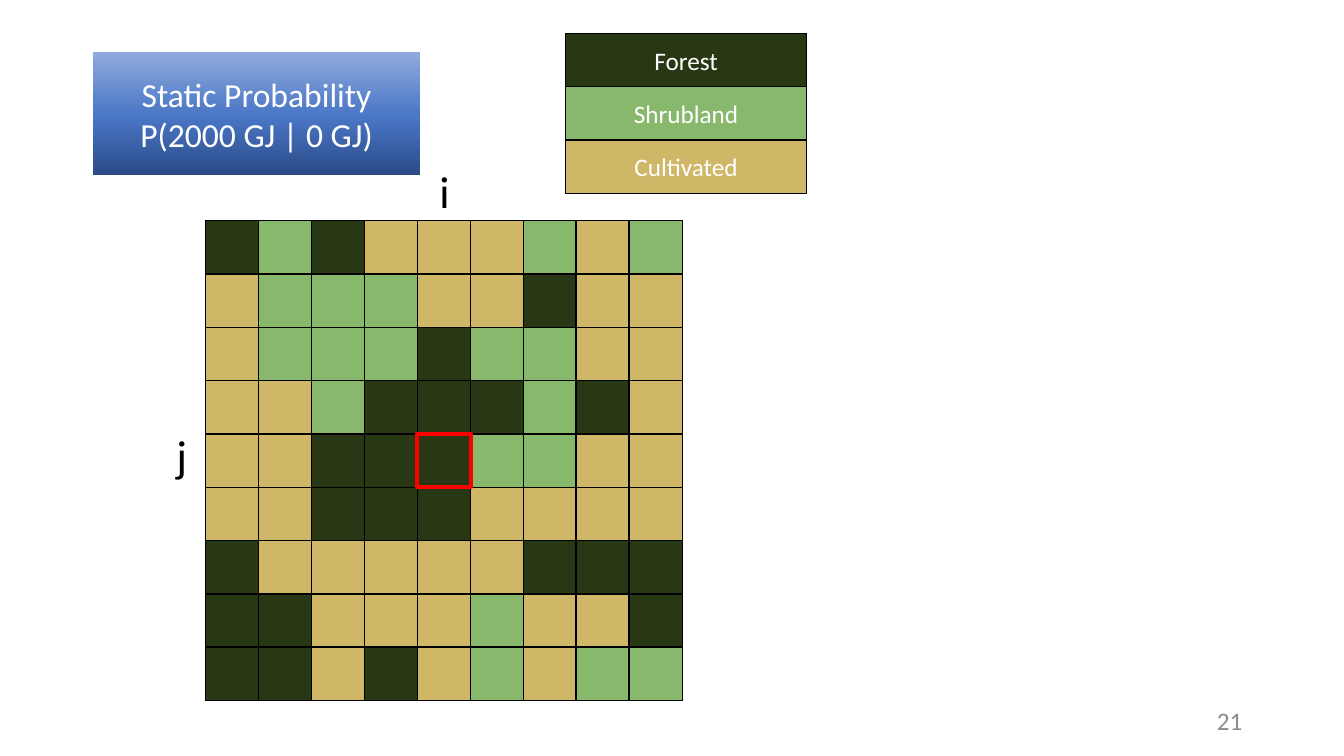
import copy

import pptx
import pptx.dml.color
import pptx.enum.shapes
import pptx.enum.text
import pptx.util
from pptx.util import Inches

COLORS = {
    "forest": "283814",
    "shrubland": "87B86C",
    "cultivated": "D0B667",
    "outline": "000000",
    "highlight": "FF0000",
    "light_text": "FFFFFF",
    "dark_text": "000000",
    "page_number": "8C8C8C",
}
HEADING = ["Static Probability", "P(2000 GJ | 0 GJ)"]
HEADING_GRADIENT = [(0, "2A4B86"), (0.48, "4A76C6"), (1, "8FAADC")]
LEGEND = ["Forest", "Shrubland", "Cultivated"]
LAND_COVER = [
    "FSFCCCSCS",
    "CSSSCCFCC",
    "CSSSFSSCC",
    "CCSFFFSFC",
    "CCFFFSSCC",
    "CCFFFCCCC",
    "FCCCCCFFF",
    "FFCCCSCCF",
    "FFCFCSCSS",
]
COVER_COLORS = {cover[0]: COLORS[cover.lower()] for cover in LEGEND}
FOCUS_ROW, FOCUS_COLUMN = 4, 4
AXIS_LABELS = [("j", 1.65, 4.19), ("i", 4.26, 1.58)]

FONT = "Calibri"
CELL = 0.53
GRID_LEFT, GRID_TOP = 2.04, 2.19
COLUMN_STEP, ROW_STEP = 4.2 / 8, 4.23 / 8
LEGEND_LEFT, LEGEND_TOP, LEGEND_WIDTH = 5.61, 0.33, 2.39

ALIGN = pptx.enum.text.PP_ALIGN
MIDDLE = pptx.enum.text.MSO_ANCHOR.MIDDLE


def rgb(value):
    return pptx.dml.color.RGBColor.from_string(value)


def write(shape, lines, size, color, align):
    frame = shape.text_frame
    frame.word_wrap = True
    frame.text = "\n".join(lines)
    for paragraph in frame.paragraphs:
        paragraph.alignment = align
        paragraph.font.name = FONT
        paragraph.font.size = pptx.util.Pt(size)
        paragraph.font.color.rgb = rgb(color)
    return frame


def add_box(shapes, left, top, width, height, fill=None, line=None, weight=1):
    box = shapes.add_shape(
        pptx.enum.shapes.MSO_SHAPE.RECTANGLE,
        Inches(left), Inches(top), Inches(width), Inches(height),
    )
    box.shadow.inherit = False
    if fill:
        box.fill.solid()
        box.fill.fore_color.rgb = rgb(fill)
    else:
        box.fill.background()
    if line:
        box.line.color.rgb = rgb(line)
        box.line.width = pptx.util.Pt(weight)
    else:
        box.line.fill.background()
    return box


def cell_corner(row, column):
    return GRID_LEFT + column * COLUMN_STEP, GRID_TOP + row * ROW_STEP


def add_heading(shapes):
    heading = add_box(shapes, 0.92, 0.52, 3.25, 1.22)
    heading.fill.gradient()
    heading.fill.gradient_angle = 90
    stop_list = heading.fill._xPr.find(".//" + pptx.oxml.ns.qn("a:gsLst"))
    stop_list.append(copy.deepcopy(stop_list[0]))
    for stop, (position, color) in zip(heading.fill.gradient_stops, HEADING_GRADIENT):
        stop.position = position
        stop.color.rgb = rgb(color)
    write(heading, HEADING, 24, COLORS["light_text"], ALIGN.CENTER)


def add_land_cover(shapes):
    grid = shapes.add_group_shape()
    for row, covers in enumerate(LAND_COVER):
        for column, cover in enumerate(covers):
            add_box(grid.shapes, *cell_corner(row, column), CELL, CELL,
                    COVER_COLORS[cover], COLORS["outline"])


def add_legend(shapes):
    legend = shapes.add_group_shape()
    for index, cover in enumerate(LEGEND):
        entry = add_box(legend.shapes, LEGEND_LEFT, LEGEND_TOP + index * CELL,
                        LEGEND_WIDTH, CELL, COVER_COLORS[cover[0]], COLORS["outline"])
        write(entry, [cover], 18, COLORS["light_text"], ALIGN.CENTER)


def main():
    deck = pptx.Presentation()
    deck.slide_width, deck.slide_height = Inches(13.33), Inches(7.5)
    shapes = deck.slides.add_slide(deck.slide_layouts[6]).shapes

    add_heading(shapes)
    page_number = shapes.add_textbox(Inches(9.42), Inches(6.95), Inches(3), Inches(0.4))
    write(page_number, ["21"], 18, COLORS["page_number"], ALIGN.RIGHT).vertical_anchor = MIDDLE

    add_land_cover(shapes)
    for label, left, top in AXIS_LABELS:
        axis = shapes.add_textbox(Inches(left), Inches(top), Inches(0.72), Inches(0.64))
        write(axis, [label], 32, COLORS["dark_text"], ALIGN.LEFT)
    add_box(shapes, *cell_corner(FOCUS_ROW, FOCUS_COLUMN), CELL, CELL,
            line=COLORS["highlight"], weight=3)
    add_legend(shapes)

    deck.save("out.pptx")


if __name__ == "__main__":
    main()
